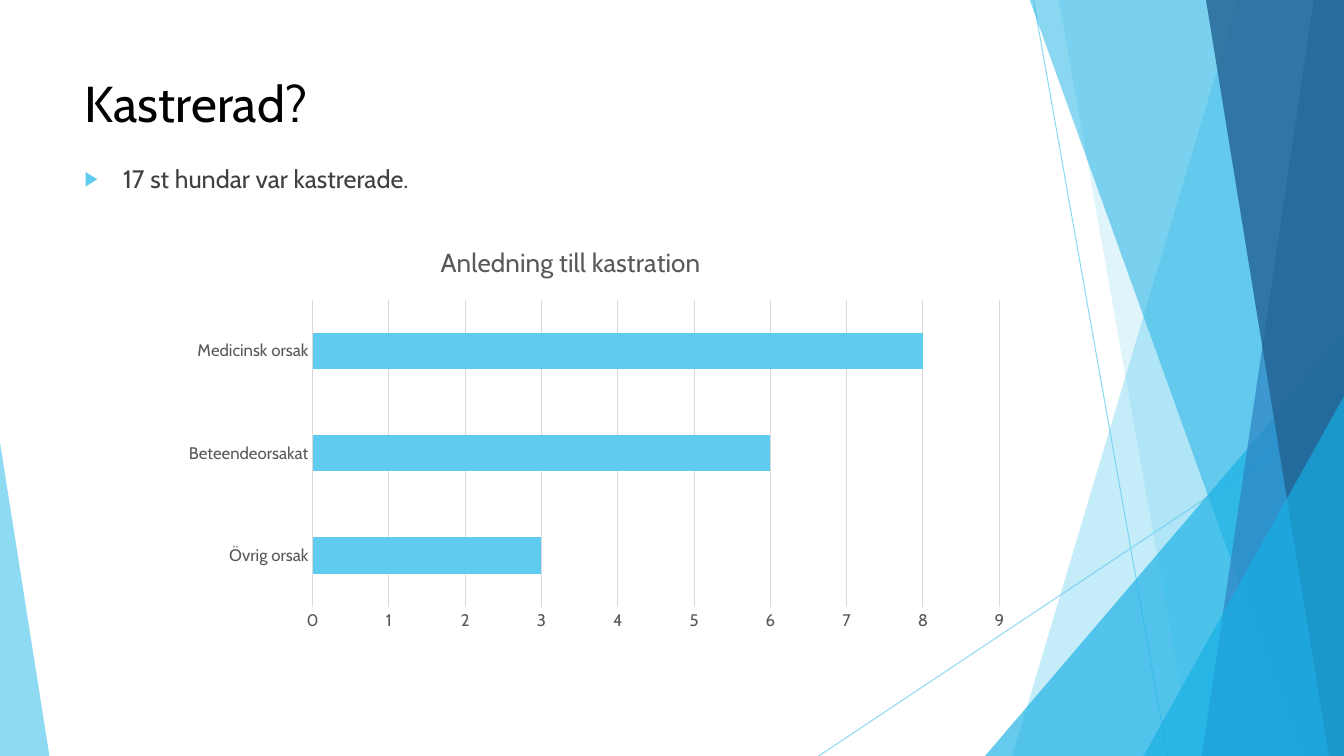
from lxml.etree import SubElement
from pptx import Presentation
from pptx.chart.data import CategoryChartData
from pptx.dml.color import RGBColor
from pptx.enum.chart import XL_CHART_TYPE as ChartType, XL_TICK_MARK as TickMark
from pptx.enum.shapes import MSO_CONNECTOR as Connector, MSO_SHAPE as Shape
from pptx.enum.text import MSO_ANCHOR as Anchor, MSO_AUTO_SIZE as AutoSize, PP_ALIGN as Align
from pptx.oxml.ns import qn
from pptx.util import Pt

EMU_PER_PX = 9144
FONT = "Cabin"
BLACK = RGBColor(0x00, 0x00, 0x00)
TEXT_GRAY = RGBColor(0x40, 0x40, 0x40)
CHART_GRAY = RGBColor(0x59, 0x59, 0x59)
GRID_GRAY = RGBColor(0xD9, 0xD9, 0xD9)
SKY = RGBColor(0x5F, 0xCB, 0xEF)
CYAN = RGBColor(0x17, 0xB0, 0xE4)
BLUE = RGBColor(0x2E, 0x83, 0xC3)
NAVY = RGBColor(0x22, 0x62, 0x92)


def px(*lengths):
    """Turn px lengths into a list of EMU."""
    return [length * EMU_PER_PX for length in lengths]


def format_font(font, size, color):
    """Set the typeface, size and colour of a font."""
    font.name, font.size, font.bold = FONT, Pt(size), False
    font.color.rgb = color


def write(frame, text, size=18, color=TEXT_GRAY):
    """Write one formatted line into a text frame and return its paragraph."""
    frame.text = text
    paragraph = frame.paragraphs[0]
    format_font(paragraph.runs[0].font, size, color)
    return paragraph


def set_alpha(shape, percent):
    """Make the colours of a shape partly transparent."""
    for color in shape._element.spPr.iter(qn("a:srgbClr")):
        SubElement(color, qn("a:alpha"), val=str(percent * 1000))


def set_layout(parent, **values):
    """Give a chart element a manual layout in fractions of the chart."""
    layout = parent.find(qn("c:layout"))
    if layout is None:
        layout = SubElement(parent, qn("c:layout"))
        parent.insert(0, layout)
    manual = SubElement(layout, qn("c:manualLayout"))
    for name, value in values.items():
        SubElement(manual, qn("c:" + name), val=str(value))


class FacetSlide:
    """Draws the elements of one slide in the faceted blue style."""

    def __init__(self, presentation):
        """Add a slide with title and body placeholders."""
        self.slide = presentation.slides.add_slide(presentation.slide_layouts[1])
        self.shapes = self.slide.shapes

    def line(self, *ends):
        """Draw a thin sky-blue line."""
        connector = self.shapes.add_connector(Connector.STRAIGHT, *px(*ends))
        connector.line.color.rgb = SKY
        connector.line.width = Pt(0.75)
        SubElement(connector._element.spPr, qn("a:effectLst"))
        set_alpha(connector, 70)

    def paint(self, shape, color, alpha):
        """Fill a shape without outline or shadow."""
        shape.shadow.inherit = False
        shape.fill.solid()
        shape.fill.fore_color.rgb = color
        shape.line.fill.background()
        set_alpha(shape, alpha)

    def facet(self, top_left, top_right, bottom_right, bottom_left, color, alpha):
        """Draw a four-sided facet over the full slide height."""
        builder = self.shapes.build_freeform(top_left, -1, scale=EMU_PER_PX)
        builder.add_line_segments([(top_right, -1), (bottom_right, 750), (bottom_left, 750)])
        self.paint(builder.convert_to_shape(), color, alpha)

    def triangle(self, *box, apex, color, alpha):
        """Draw a triangle with its apex at a fraction of its width."""
        shape = self.shapes.add_shape(Shape.ISOSCELES_TRIANGLE, *px(*box))
        shape.adjustments[0] = apex
        self.paint(shape, color, alpha)

    def place(self, placeholder, *box):
        """Move a placeholder to the front and return its text frame."""
        placeholder.left, placeholder.top, placeholder.width, placeholder.height = px(*box)
        self.shapes._spTree.append(placeholder._element)
        frame = placeholder.text_frame
        frame.word_wrap = True
        frame.auto_size = AutoSize.NONE
        frame.vertical_anchor = Anchor.TOP
        return frame

    def title(self, text, *box):
        """Fill the title placeholder."""
        paragraph = write(self.place(self.shapes.title, *box), text, size=36, color=BLACK)
        paragraph.alignment = Align.LEFT

    def bullet(self, text, *box):
        """Fill the body placeholder with one bulleted line."""
        paragraph = write(self.place(self.slide.placeholders[1], *box), text)
        paragraph.space_before = Pt(10)
        properties = paragraph._p.get_or_add_pPr()
        indent = 38 * EMU_PER_PX
        properties.set("marL", str(indent))
        properties.set("indent", str(-indent))
        bullet_color = SubElement(properties, qn("a:buClr"))
        SubElement(bullet_color, qn("a:srgbClr"), val=str(SKY))
        SubElement(properties, qn("a:buSzPct"), val="80000")
        SubElement(properties, qn("a:buFont"), typeface="Arial")
        SubElement(properties, qn("a:buChar"), char="▶")

    def bar_chart(self, title, values, *box):
        """Draw a horizontal bar chart from a dict of values."""
        data = CategoryChartData()
        data.categories = list(values)
        data.add_series(title, list(values.values()))
        chart = self.shapes.add_chart(ChartType.BAR_CLUSTERED, *px(*box), data).chart
        format_font(chart.font, 10, BLACK)
        chart.has_legend = False
        chart.has_title = True
        write(chart.chart_title.text_frame, title, size=18.6, color=CHART_GRAY)
        set_layout(chart.chart_title._element, xMode="edge", yMode="edge", x=0.31, y=0.02)
        plot = chart.plots[0]
        plot.vary_by_categories = False
        plot.gap_width = 182
        fill = plot.series[0].format.fill
        fill.solid()
        fill.fore_color.rgb = SKY
        set_layout(chart._chartSpace.chart.plotArea, layoutTarget="inner", xMode="edge",
                   yMode="edge", x=0.165, y=0.169, w=0.808, h=0.75)
        category_axis, value_axis = chart.category_axis, chart.value_axis
        for axis in (category_axis, value_axis):
            axis.major_tick_mark = axis.minor_tick_mark = TickMark.NONE
            format_font(axis.tick_labels.font, 12, CHART_GRAY)
        category_axis.has_major_gridlines = False
        value_axis.has_major_gridlines = True
        for element in (category_axis, value_axis.major_gridlines):
            element.format.line.color.rgb = GRID_GRAY
            element.format.line.width = Pt(0.75)
        value_axis.format.line.fill.background()
        value_axis.minimum_scale, value_axis.maximum_scale = 0, 9
        value_axis.major_unit = 1


def main():
    """Build the slide and save it."""
    presentation = Presentation()
    presentation.slide_width, presentation.slide_height = px(1333, 750)
    slide = FacetSlide(presentation)
    slide.line(1025, 0, 1158, 750)
    slide.line(1333, 403, 812, 750)
    slide.facet(1228, 1333, 1333, 1004, SKY, 36)
    slide.facet(1050, 1333, 1333, 1183, SKY, 20)
    slide.triangle(977, 333, 356, 417, apex=1, color=CYAN, alpha=66)
    slide.facet(1021, 1333, 1333, 1291, CYAN, 50)
    slide.facet(1303, 1333, 1333, 1192, BLUE, 70)
    slide.facet(1196, 1333, 1333, 1318, NAVY, 80)
    slide.triangle(1134, 393, 199, 357, apex=1, color=CYAN, alpha=66)
    slide.triangle(0, 439, 49, 311, apex=0, color=SKY, alpha=70)
    slide.title("Kastrerad?", 74, 67, 940, 90)
    slide.bullet("17 st hundar var kastrerade.", 74, 157, 940, 51)
    reasons = {"Övrig orsak": 3, "Beteendeorsakat": 6, "Medicinsk orsak": 8}
    slide.bar_chart("Anledning till kastration", reasons, 171, 229, 843, 406)
    presentation.save("out.pptx")


if __name__ == "__main__":
    main()
